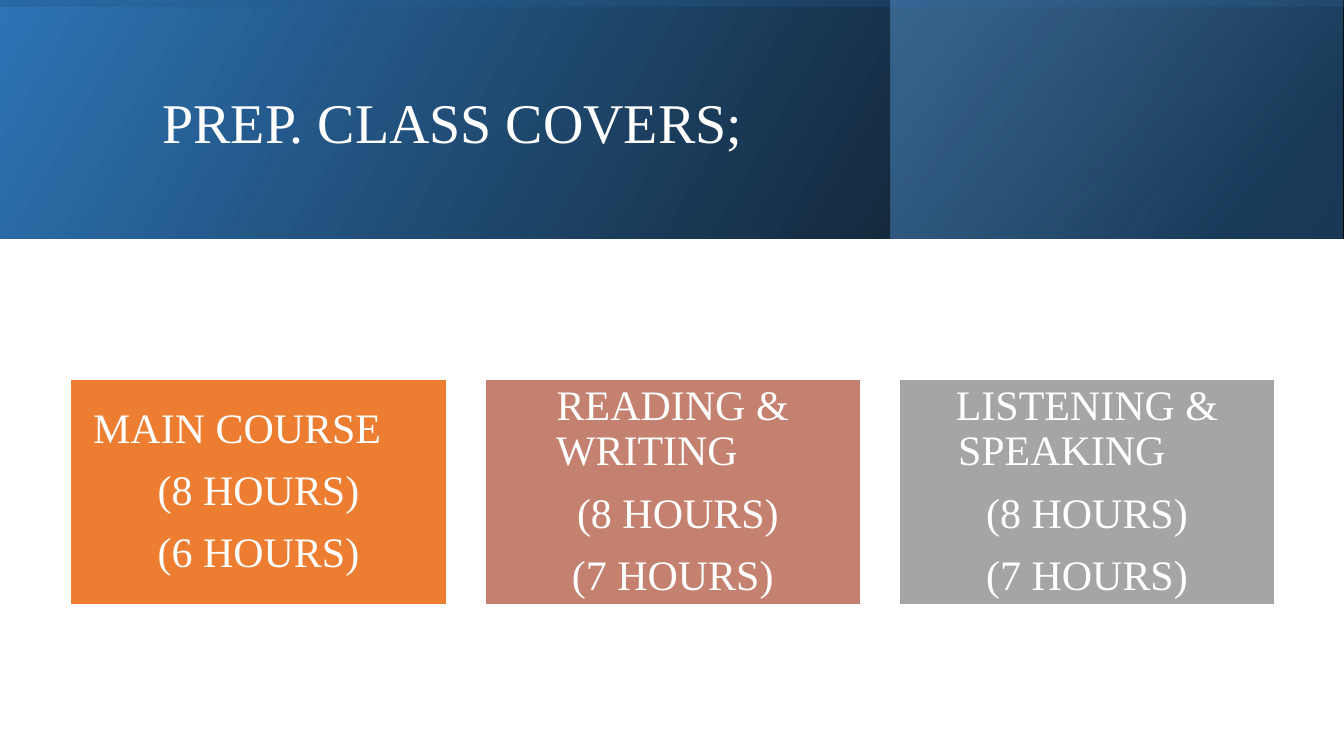
"""Build the slide that lists the parts of the prep class and their hours."""
from dataclasses import dataclass

from lxml.etree import SubElement
from pptx import Presentation
from pptx.dml.color import RGBColor
from pptx.enum.shapes import MSO_SHAPE
from pptx.enum.text import MSO_ANCHOR, MSO_AUTO_SIZE, PP_ALIGN
from pptx.oxml.ns import qn
from pptx.slide import Slide
from pptx.text.text import _Paragraph as Paragraph
from pptx.util import Cm, Pt

FONT = "Times New Roman"
WHITE = RGBColor(0xFF, 0xFF, 0xFF)
BLACK = RGBColor(0x00, 0x00, 0x00)
BLUE = RGBColor(0x2E, 0x75, 0xB6)
NAVY = RGBColor(0x1F, 0x4E, 0x79)
SKY = RGBColor(0x5B, 0x9B, 0xD5)
ORANGE = RGBColor(0xED, 0x7D, 0x31)
ROSE = RGBColor(0xC4, 0x81, 0x70)
GREY = RGBColor(0xA5, 0xA5, 0xA5)

SLIDE_W, SLIDE_H, BANNER_H = 33.87, 19.05, 6.02
CARD_LEFT, CARD_TOP, CARD_W, CARD_H, CARD_PITCH = 1.78, 9.55, 9.47, 5.69, 10.44


@dataclass
class Stop:
    position: float
    color: RGBColor
    opacity: int


@dataclass
class Band:
    left: float
    top: float
    width: float
    height: float
    angle: int
    stops: tuple[Stop, Stop]
    rotation: int = 0


@dataclass
class Line:
    text: str
    left: float = 0
    right: float = 0
    first: float = 0


@dataclass
class Card:
    color: RGBColor
    lines: tuple[Line, ...]


SIDE = (SLIDE_W - BANNER_H) / 2
BANDS = (
    Band(0, 0, SLIDE_W, BANNER_H, 30, (Stop(0, BLACK, 96), Stop(1, BLUE, 100))),
    Band(22.45, 0, 11.38, BANNER_H, 40, (Stop(0.19, NAVY, 68), Stop(1, SKY, 48))),
    Band(SIDE, -SIDE, BANNER_H, SLIDE_W, 10,
         (Stop(0.23, BLUE, 16), Stop(0.99, BLACK, 45)), 270),
)
CARDS = (
    Card(ORANGE, (Line("MAIN COURSE", right=1.07), Line("(8 HOURS)"), Line("(6 HOURS)"))),
    Card(ROSE, (Line("READING & WRITING", right=1.3, first=1.3),
                Line("(8 HOURS)", left=0.26), Line("(7 HOURS)"))),
    Card(GREY, (Line("LISTENING & SPEAKING", right=1.27, first=1.27),
                Line("(8 HOURS)"), Line("(7 HOURS)"))),
)


def format_paragraph(p: Paragraph, size: int, align: PP_ALIGN) -> None:
    p.alignment = align
    p.line_spacing = 0.9
    for r in p.runs:
        r.font.name = FONT
        r.font.size = Pt(size)
        r.font.color.rgb = WHITE


def add_band(s: Slide, band: Band) -> None:
    sp = s.shapes.add_shape(MSO_SHAPE.RECTANGLE, Cm(band.left), Cm(band.top),
                            Cm(band.width), Cm(band.height))
    sp.shadow.inherit = False
    sp.line.fill.background()
    sp.rotation = band.rotation
    sp.fill.gradient()
    sp.fill.gradient_angle = band.angle
    for grad_stop, stop in zip(sp.fill.gradient_stops, band.stops):
        grad_stop.position = stop.position
        grad_stop.color.rgb = stop.color
    sp_pr = sp.element.spPr
    sp_pr.find(qn("a:xfrm")).set("flipH", "1")
    for color, stop in zip(sp_pr.iter(qn("a:srgbClr")), band.stops):
        SubElement(color, qn("a:alpha")).set("val", str(stop.opacity * 1000))


def add_title(s: Slide, text: str) -> None:
    title = s.shapes.title
    title.left, title.top, title.width, title.height = Cm(3.84), Cm(0.97), Cm(27), Cm(4.37)
    tf = title.text_frame
    tf.text = text
    tf.auto_size = MSO_AUTO_SIZE.NONE
    tf.vertical_anchor = MSO_ANCHOR.MIDDLE
    format_paragraph(tf.paragraphs[0], 40, PP_ALIGN.LEFT)


def add_card(s: Slide, card: Card, left: float) -> None:
    sp = s.shapes.add_shape(MSO_SHAPE.RECTANGLE, Cm(left), Cm(CARD_TOP),
                            Cm(CARD_W), Cm(CARD_H))
    sp.shadow.inherit = False
    sp.fill.solid()
    sp.fill.fore_color.rgb = card.color
    sp.line.color.rgb = WHITE
    sp.line.width = Pt(1)
    tf = sp.text_frame
    tf.word_wrap = True
    tf.vertical_anchor = MSO_ANCHOR.MIDDLE
    tf.margin_left = tf.margin_right = 0
    tf.margin_top = tf.margin_bottom = Cm(0.3)
    tf.text = "\n".join(line.text for line in card.lines)
    for p, line in zip(tf.paragraphs, card.lines):
        format_paragraph(p, 30, PP_ALIGN.CENTER)
        p.space_after = Pt(12)
        p_pr = p._p.get_or_add_pPr()
        for name, length in (("marL", line.left), ("marR", line.right), ("indent", line.first)):
            p_pr.set(name, str(Cm(length)))


def main() -> None:
    prs = Presentation()
    prs.slide_width, prs.slide_height = Cm(SLIDE_W), Cm(SLIDE_H)
    s = prs.slides.add_slide(prs.slide_layouts[5])
    for band in BANDS:
        add_band(s, band)
    add_title(s, "PREP. CLASS COVERS;")
    s.shapes._spTree.append(s.shapes.title.element)
    for i, card in enumerate(CARDS):
        add_card(s, card, CARD_LEFT + i * CARD_PITCH)
    prs.save("out.pptx")


if __name__ == "__main__":
    main()
